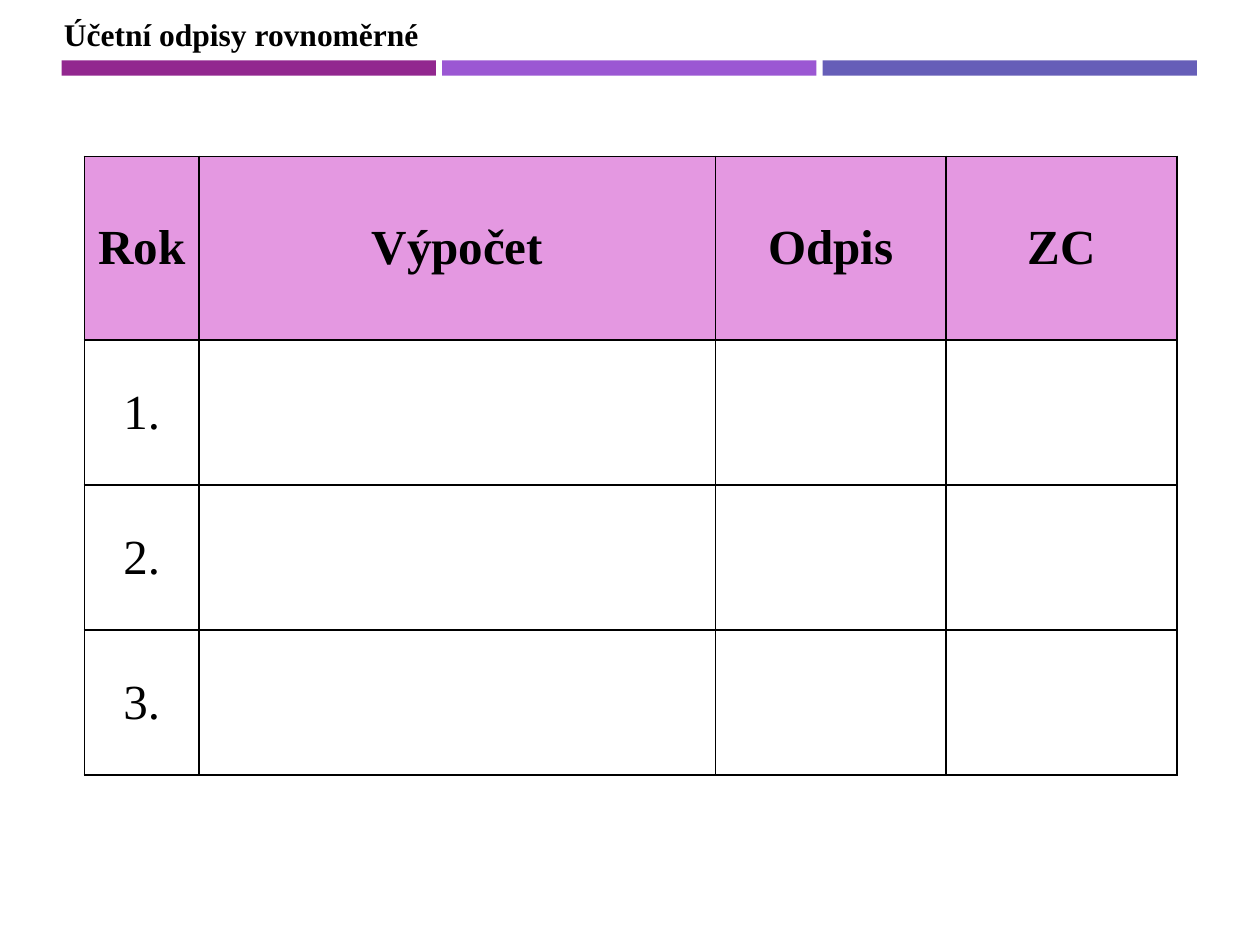
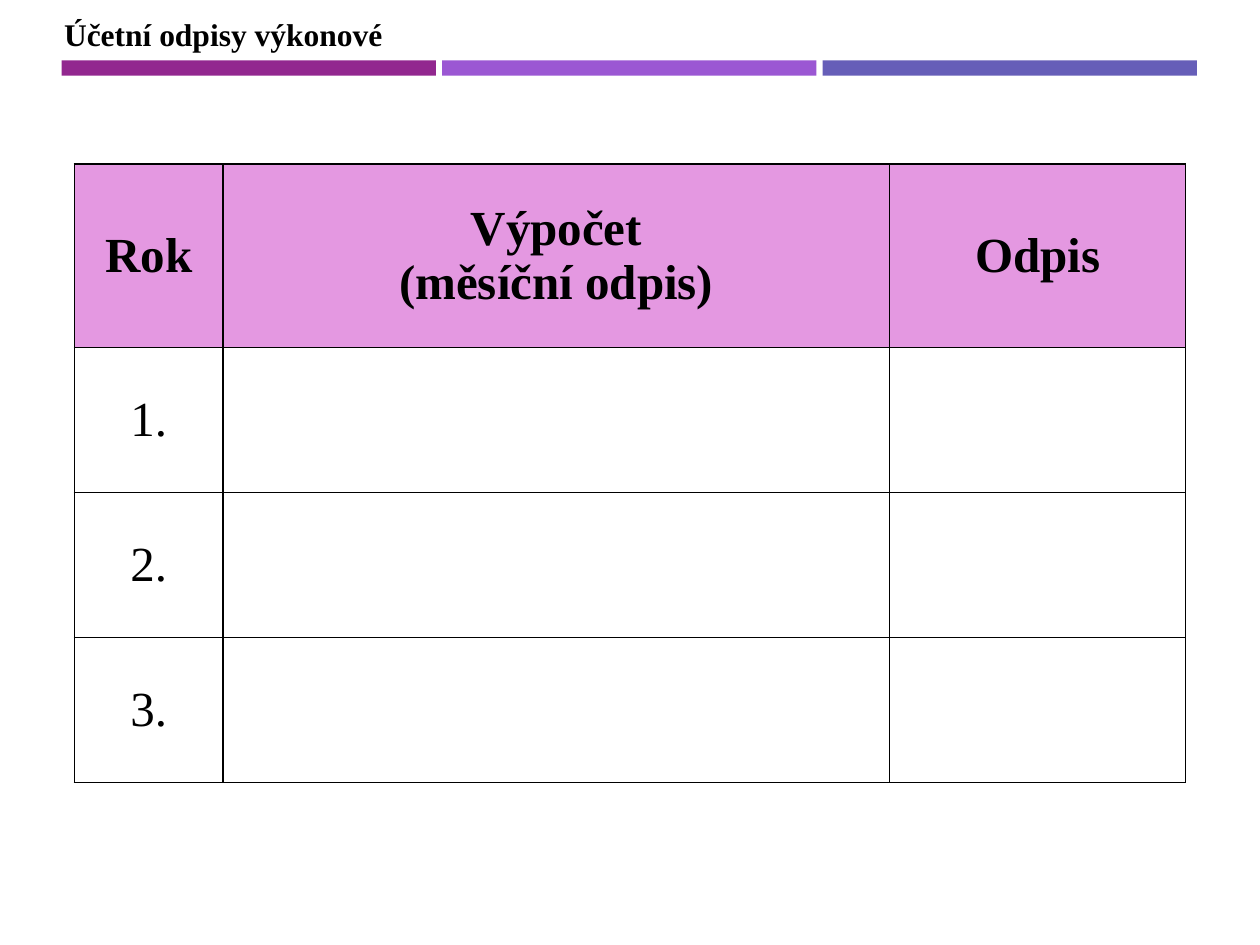
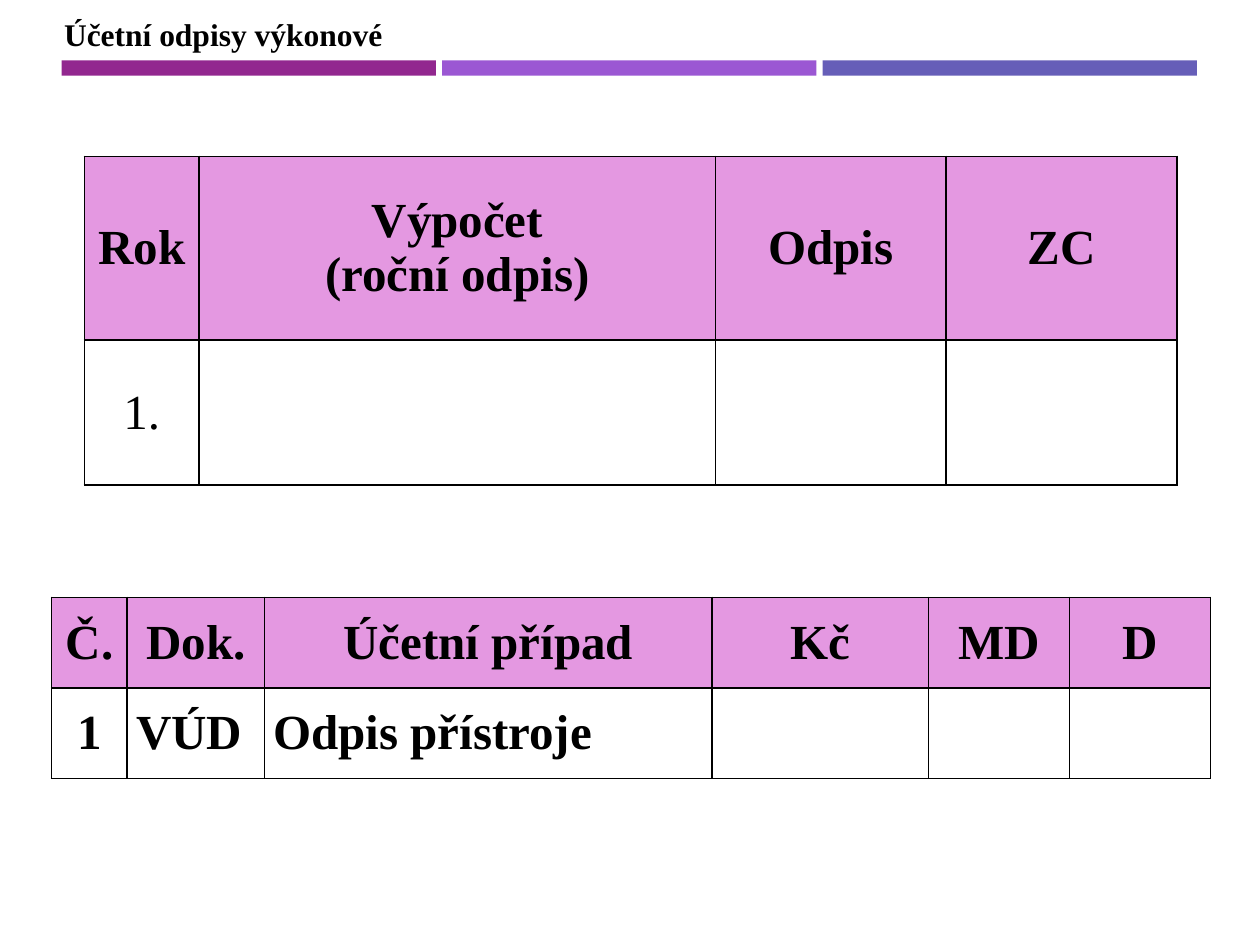
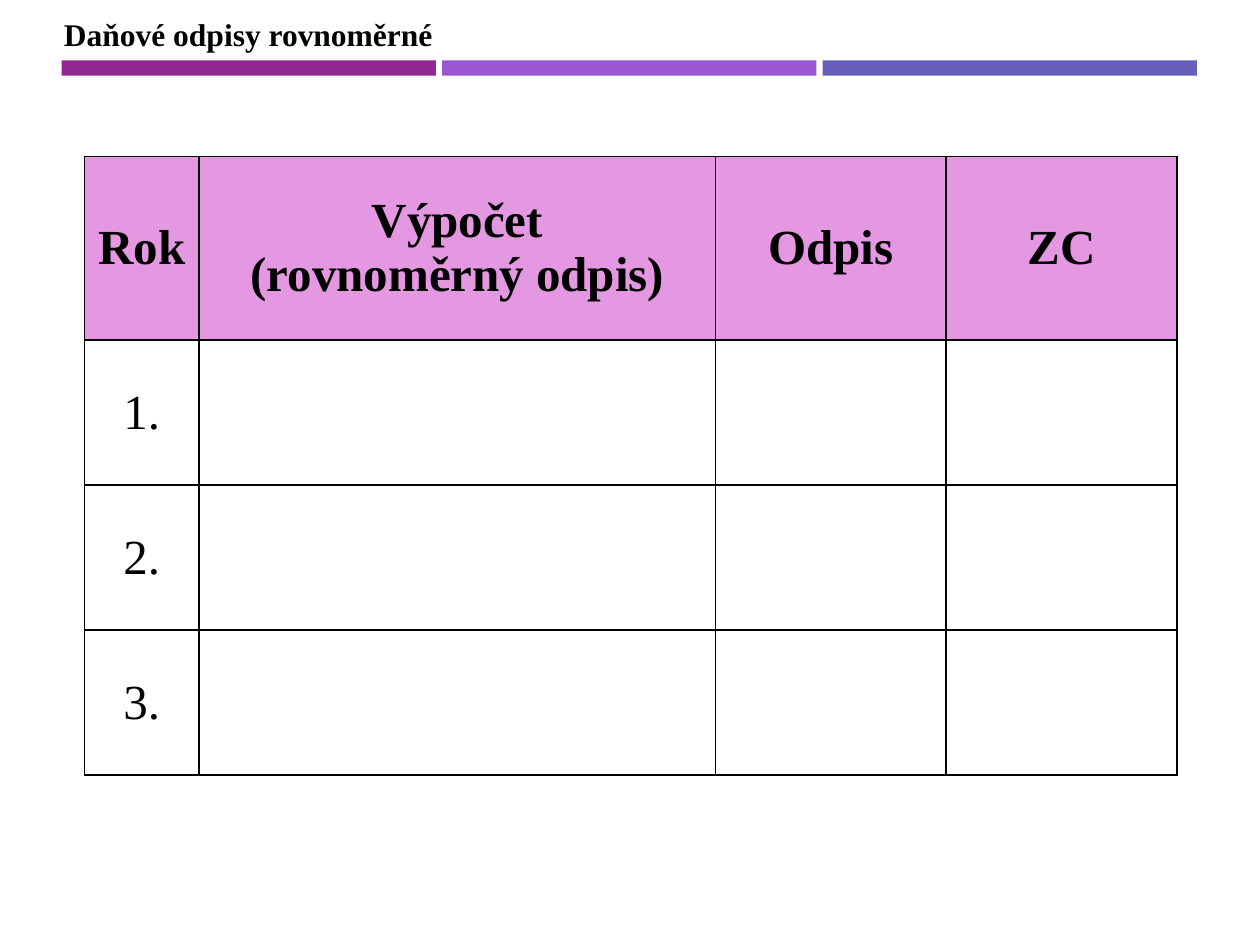
from lxml import etree
from pptx import Presentation
from pptx.dml.color import RGBColor
from pptx.enum.shapes import MSO_SHAPE as Shape
from pptx.enum.text import MSO_ANCHOR as Anchor, MSO_AUTO_SIZE as AutoSize, PP_ALIGN as Align
from pptx.oxml.ns import qn
from pptx.util import Inches, Pt

# Shared style
BLACK = "000000"
HEADER_FILL = "E498E1"
BAND_COLORS = ("92278F", "9B57D3", "665EB8")
BAND_LEFT, BAND_TOP, BAND_WIDTH, BAND_HEIGHT, BAND_STEP = 0.49, 0.48, 2.97, 0.12, 3.02
TITLE_FONT = {"name": "Times New Roman", "size": Pt(18), "bold": True}
HEADER_FONT = {**TITLE_FONT, "size": Pt(28)}
YEAR_FONT = {**HEADER_FONT, "bold": False}
CELL_FORMAT = {
    "margin_left": Inches(0.07), "margin_right": Inches(0.07),
    "margin_top": 0, "margin_bottom": 0, "vertical_anchor": Anchor.MIDDLE,
}

# Table grids
YEAR_COLUMNS = (0.91, 4.1, 1.83, 1.83)
MONTHLY_COLUMNS = (1.18, 5.29, 2.35)
ENTRY_COLUMNS = (0.6, 1.09, 3.55, 1.72, 1.12, 1.12)
HEADER_HEIGHT, YEAR_HEIGHT, ENTRY_HEIGHT = 1.46, 1.15, 0.72


def color(value):
    return RGBColor.from_string(value)


def apply(target, values):
    for name, value in values.items():
        setattr(target, name, value)


class Deck:
    def __init__(self):
        self.presentation = Presentation()
        self.presentation.slide_width = Inches(10)
        self.presentation.slide_height = Inches(7.5)
        self.slide = None

    def add_slide(self, title, title_width):
        self.slide = self.presentation.slides.add_slide(self.presentation.slide_layouts[6])
        self.bands()
        self.title(title, title_width)

    def bands(self):
        for index, fill in enumerate(BAND_COLORS):
            band = self.slide.shapes.add_shape(
                Shape.RECTANGLE, Inches(BAND_LEFT + index * BAND_STEP), Inches(BAND_TOP),
                Inches(BAND_WIDTH), Inches(BAND_HEIGHT))
            band.shadow.inherit = False
            band.fill.solid()
            band.fill.fore_color.rgb = color(fill)
            band.line.fill.background()

    def title(self, text, width):
        box = self.slide.shapes.add_textbox(
            Inches(0.41), Inches(0.07), Inches(width), Inches(0.4))
        apply(box.text_frame, {"word_wrap": False, "auto_size": AutoSize.SHAPE_TO_FIT_TEXT})
        self.fill_text(box.text_frame, text, TITLE_FONT)

    def fill_text(self, frame, text, font, align=Align.LEFT):
        for index, line in enumerate(text.split("\n")):
            paragraph = frame.add_paragraph() if index else frame.paragraphs[0]
            paragraph.alignment = align
            run = paragraph.add_run()
            run.text = line
            apply(run.font, font)
            run.font.color.rgb = color(BLACK)

    def borders(self, cell):
        properties = cell._tc.get_or_add_tcPr()
        for side in ("a:lnL", "a:lnR", "a:lnT", "a:lnB"):
            line = etree.SubElement(properties, qn(side), w=str(Pt(1)))
            fill = etree.SubElement(line, qn("a:solidFill"))
            etree.SubElement(fill, qn("a:srgbClr"), val=BLACK)

    def table(self, left, top, columns, heights, rows, body_font, body_aligns=(Align.CENTER,)):
        """Rows may be shorter than the grid; the remaining cells stay empty."""
        table = self.slide.shapes.add_table(
            len(heights), len(columns), Inches(left), Inches(top),
            Inches(sum(columns)), Inches(sum(heights))).table
        apply(table, {"first_row": False, "horz_banding": False})
        for column, width in zip(table.columns, columns):
            column.width = Inches(width)
        for row_index, (row, height, texts) in enumerate(zip(table.rows, heights, rows)):
            row.height = Inches(height)
            is_header = row_index == 0
            for cell in row.cells:
                self.borders(cell)
                if is_header:
                    cell.fill.solid()
                    cell.fill.fore_color.rgb = color(HEADER_FILL)
                else:
                    cell.fill.background()
            aligns = [Align.CENTER] * len(columns) if is_header else body_aligns
            font = HEADER_FONT if is_header else body_font
            for cell, text, align in zip(row.cells, texts, aligns):
                apply(cell, CELL_FORMAT)
                self.fill_text(cell.text_frame, text, font, align)

    def year_table(self, headers, years, left=0.67, top=1.24, columns=YEAR_COLUMNS):
        heights = [HEADER_HEIGHT] + [YEAR_HEIGHT] * years
        rows = [headers] + [[f"{year}."] for year in range(1, years + 1)]
        self.table(left, top, columns, heights, rows, YEAR_FONT)


def main():
    deck = Deck()

    # Straight-line accounting depreciation
    deck.add_slide("Účetní odpisy rovnoměrné", 3.04)
    deck.year_table(["Rok", "Výpočet", "Odpis", "ZC"], 3)

    # Output-based depreciation by month
    deck.add_slide("Účetní odpisy výkonové", 2.75)
    deck.year_table(["Rok", "Výpočet\n(měsíční odpis)", "Odpis"], 3,
                    left=0.59, top=1.3, columns=MONTHLY_COLUMNS)

    # Output-based depreciation by year, with its accounting entry
    deck.add_slide("Účetní odpisy výkonové", 2.75)
    deck.year_table(["Rok", "Výpočet\n(roční odpis)", "Odpis", "ZC"], 1)
    deck.table(0.41, 4.74, ENTRY_COLUMNS, [ENTRY_HEIGHT] * 2,
               [["Č.", "Dok.", "Účetní případ", "Kč", "MD", "D"],
                ["1", "VÚD", "Odpis přístroje"]],
               HEADER_FONT, (Align.CENTER, Align.LEFT, Align.JUSTIFY))

    # Straight-line tax depreciation
    deck.add_slide("Daňové odpisy rovnoměrné", 3.16)
    deck.year_table(["Rok", "Výpočet\n(rovnoměrný odpis)", "Odpis", "ZC"], 3)

    deck.presentation.save("out.pptx")


if __name__ == "__main__":
    main()
